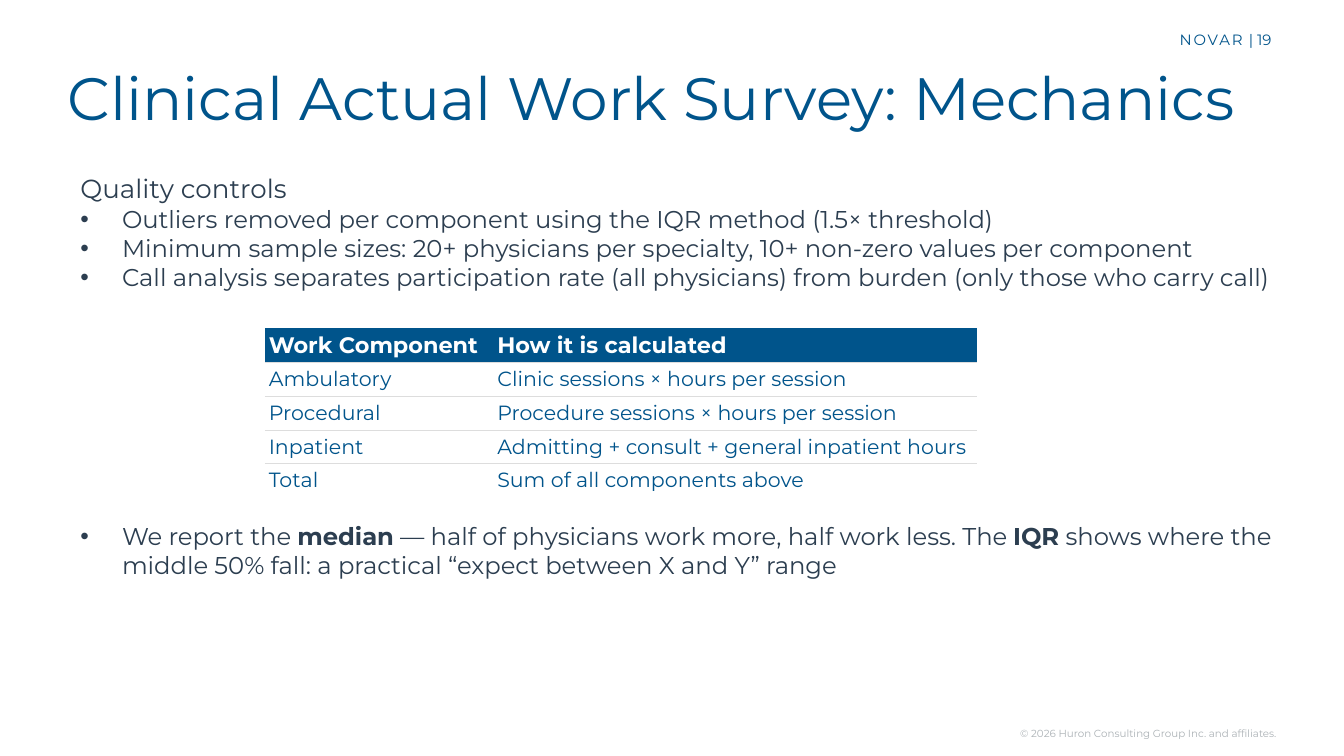
from lxml import etree
from pptx import Presentation
from pptx.dml.color import RGBColor
from pptx.enum.text import MSO_ANCHOR, PP_ALIGN
from pptx.oxml.ns import qn
from pptx.util import Inches, Pt

LEFT, RIGHT = PP_ALIGN.LEFT, PP_ALIGN.RIGHT
TOP, MIDDLE, BOTTOM = MSO_ANCHOR.TOP, MSO_ANCHOR.MIDDLE, MSO_ANCHOR.BOTTOM
BLUE, WHITE, SLATE, GRAY, RULE = "00548B", "FFFFFF", "2C3E50", "ACB2B6", "DDDDDD"


def color(value):
    return RGBColor.from_string(value)


def write(paragraph, text, size, ink=BLUE, bold=False, align=LEFT, bullet=False, tracking=0):
    paragraph.alignment = align
    properties = paragraph._p.get_or_add_pPr()
    if bullet and properties.find(qn("a:buChar")) is None:
        properties.set("marL", str(Inches(0.31)))
        properties.set("indent", str(-Inches(0.31)))
        etree.SubElement(properties, qn("a:buFont")).set("typeface", "Arial")
        etree.SubElement(properties, qn("a:buChar")).set("char", "•")
    run = paragraph.add_run()
    run.text = text
    run.font.name = "Montserrat"
    run.font.size = Pt(size)
    run.font.bold = bold
    run.font.color.rgb = color(ink)
    if tracking:
        run._r.get_or_add_rPr().set("spc", str(tracking))


presentation = Presentation()
presentation.slide_width = Inches(10)
presentation.slide_height = Inches(10) * 9 // 16
slide = presentation.slides.add_slide(presentation.slide_layouts[5])

title = slide.shapes.title
title.left, title.top = Inches(0.5), Inches(0.45)
title.width, title.height = Inches(9), Inches(0.72)

frames = [title.text_frame]
for left, top, width, height in [
    (7.25, 5.31, 2.25, 0.3),
    (7.65, 0.18, 1.91, 0.24),
    (0.5, 1.17, 9.5, 1.51),
    (0.5, 3.83, 9.16, 0.54),
]:
    box = slide.shapes.add_textbox(Inches(left), Inches(top), Inches(width), Inches(height))
    frames.append(box.text_frame)
heading, copyright_line, page_mark, controls, reporting = frames

for frame, anchor, side, above, below in [
    (heading, TOP, 0, 0, 0),
    (copyright_line, MIDDLE, 0, 0, 0),
    (page_mark, TOP, 0.1, 0.05, 0.05),
    (controls, BOTTOM, 0.1, 0, 0.51),
    (reporting, TOP, 0.1, 0.05, 0.05),
]:
    frame.word_wrap = True
    frame.vertical_anchor = anchor
    frame.margin_left = frame.margin_right = Inches(side)
    frame.margin_top, frame.margin_bottom = Inches(above), Inches(below)

write(heading.paragraphs[0], "Clinical Actual Work Survey: Mechanics", 32)
write(copyright_line.paragraphs[0], "© 2026 Huron Consulting Group Inc. and affiliates.", 5.5, ink=GRAY, align=RIGHT)
write(page_mark.paragraphs[0], "NOVAR", 8, align=RIGHT, tracking=100)
write(page_mark.paragraphs[0], " | 19", 8, align=RIGHT)

write(controls.paragraphs[0], "Quality controls", 14, ink=SLATE)
for control in [
    "Outliers removed per component using the IQR method (1.5× threshold)",
    "Minimum sample sizes: 20+ physicians per specialty, 10+ non-zero values per component",
    "Call analysis separates participation rate (all physicians) from burden (only those who carry call)",
]:
    write(controls.add_paragraph(), control, 13, ink=SLATE, bullet=True)

for phrase, strong in [
    ("We report the ", False),
    ("median", True),
    (" — half of physicians work more, half work less. The ", False),
    ("IQR", True),
    (" shows where the middle 50% fall: a practical “expect between X and Y” range", False),
]:
    write(reporting.paragraphs[0], phrase, 13, ink=SLATE, bold=strong, bullet=True)

components = [
    ("Work Component", "How it is calculated"),
    ("Ambulatory", "Clinic sessions × hours per session"),
    ("Procedural", "Procedure sessions × hours per session"),
    ("Inpatient", "Admitting + consult + general inpatient hours"),
    ("Total", "Sum of all components above"),
]
last = len(components) - 1
table = slide.shapes.add_table(
    len(components), 2, Inches(1.97), Inches(2.44), Inches(5.3), Inches(1.26)
).table
table.columns[0].width, table.columns[1].width = Inches(1.7), Inches(3.6)

for row, entries in enumerate(components):
    header = row == 0
    table.rows[row].height = Inches(0.26 if header else 0.25)
    ruled = {"a:lnT": not header, "a:lnB": row < last}
    for column, entry in enumerate(entries):
        cell = table.cell(row, column)
        cell.margin_left = cell.margin_right = Inches(0.03)
        cell.margin_top = cell.margin_bottom = Inches(0.03)
        cell.vertical_anchor = BOTTOM if header else TOP
        cell.fill.solid()
        cell.fill.fore_color.rgb = color(BLUE if header else WHITE)
        write(cell.text_frame.paragraphs[0], entry, 12 if header else 11,
              ink=WHITE if header else BLUE, bold=header)
        for position, edge in enumerate(["a:lnL", "a:lnR", "a:lnT", "a:lnB"]):
            border = etree.Element(qn(edge), w=str(Pt(0.5)))
            if ruled.get(edge):
                fill = etree.SubElement(border, qn("a:solidFill"))
                etree.SubElement(fill, qn("a:srgbClr")).set("val", RULE)
            else:
                etree.SubElement(border, qn("a:noFill"))
            cell._tc.get_or_add_tcPr().insert(position, border)

presentation.save("out.pptx")
